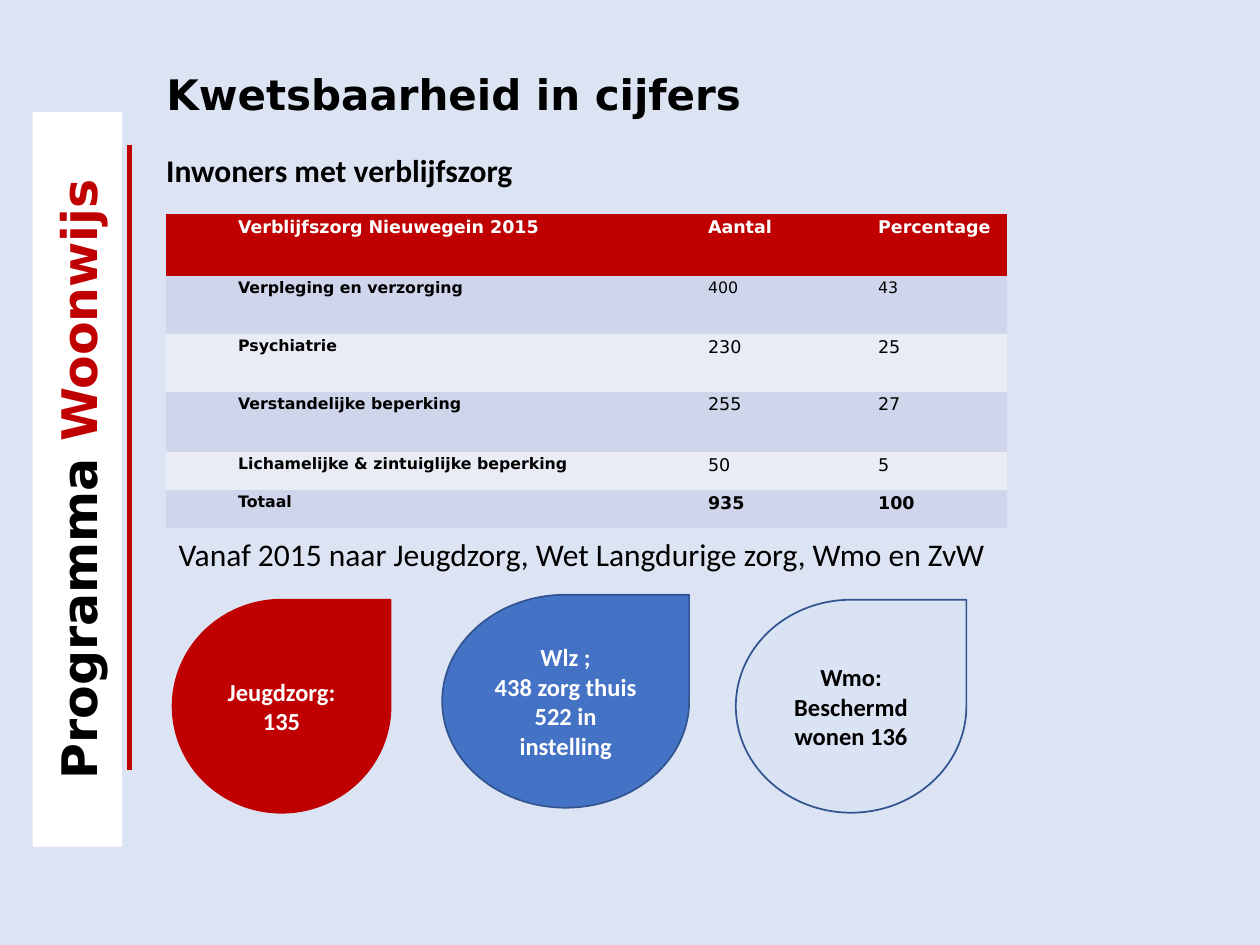
"""Build the slide on vulnerability figures in residential care."""
from lxml.etree import SubElement
from pptx import Presentation
from pptx.dml.color import RGBColor
from pptx.enum.shapes import MSO_CONNECTOR, MSO_SHAPE
from pptx.enum.text import MSO_ANCHOR as ANCHOR, MSO_AUTO_SIZE as AUTO_SIZE, PP_ALIGN as ALIGN
from pptx.oxml.ns import qn
from pptx.util import Pt

EMU_PER_PX = 9144
COLORS = {"background": "DAE3F3", "white": "FFFFFF", "black": "000000", "red": "C00000",
          "blue": "4472C4", "outline": "325491", "odd": "CFD5EA", "even": "E9EBF5"}
HEADING, BODY = "DejaVu Sans", "Calibri"

TITLE = "Kwetsbaarheid in cijfers"
TITLE_BOX = (122, 49, 647, 50)
BANNER = [("Programma ", "black"), ("Woonwijs", "red")]
BANNER_BOX = (-230, 345, 583, 71)
RULE = (103, 115, 103, 611)

CAPTIONS = [
    ("Inwoners met verblijfszorg", (122, 115, 598, 40), True),
    ("Vanaf 2015 naar Jeugdzorg, Wet Langdurige zorg, Wmo en ZvW", (132, 420, 683, 40), False),
]

CARE_ROWS = [
    ("Verblijfszorg Nieuwegein 2015", "Aantal", "Percentage"),
    ("Verpleging en verzorging", "400", "43"),
    ("Psychiatrie", "230", "25"),
    ("Verstandelijke beperking", "255", "27"),
    ("Lichamelijke & zintuiglijke beperking", "50", "5"),
    ("Totaal", "935", "100"),
]
TABLE_ORIGIN = (132, 170)
COLUMN_WIDTHS = (373, 135, 159)
ROW_HEIGHTS = (49, 46, 46, 48, 30, 30)
CELL_MARGINS = {"margin_left": 7, "margin_right": 7, "margin_top": 0, "margin_bottom": 0}
NO_GRID_STYLE = "{2D5ABB26-0587-4C30-8999-92F81FD0307C}"

DROPS = [
    (["Jeugdzorg: 135"], (137, 476, 173, 169), "red", "red", "white"),
    (["Wlz ;", "438 zorg thuis 522 in instelling"], (351, 472, 196, 169), "blue", "outline", "white"),
    (["Wmo: Beschermd wonen 136"], (584, 476, 183, 169), "background", "outline", "black"),
]


def px(*lengths):
    return [length * EMU_PER_PX for length in lengths]


def rgb(color):
    return RGBColor.from_string(COLORS[color])


def add_run(paragraph, words, color, size, name, bold=True):
    run = paragraph.add_run()
    run.text = words
    for key, value in {"size": Pt(size), "name": name, "bold": bold}.items():
        setattr(run.font, key, value)
    run.font.color.rgb = rgb(color)


def set_frame(frame, anchor, align):
    settings = {"word_wrap": True, "auto_size": AUTO_SIZE.NONE, "vertical_anchor": anchor}
    for key, value in settings.items():
        setattr(frame, key, value)
    frame.paragraphs[0].alignment = align
    return frame.paragraphs[0]


def paint(shape, fill, line=None):
    shape.shadow.inherit = False
    shape.fill.solid()
    shape.fill.fore_color.rgb = rgb(fill)
    if line:
        shape.line.color.rgb = rgb(line)
        shape.line.width = Pt(1)
    else:
        shape.line.fill.background()


def set_background(slide):
    fill = slide.background.fill
    fill.solid()
    fill.fore_color.rgb = rgb("background")
    color = next(slide.element.iter(qn("a:srgbClr")))
    SubElement(color, qn("a:alpha"), val="93000")


def add_title(slide):
    title = slide.shapes.title
    title.left, title.top, title.width, title.height = px(*TITLE_BOX)
    add_run(set_frame(title.text_frame, ANCHOR.TOP, ALIGN.LEFT), TITLE, "black", 24, HEADING)


def add_banner(slide):
    banner = slide.shapes.add_shape(MSO_SHAPE.RECTANGLE, *px(*BANNER_BOX))
    banner.rotation = 270
    paint(banner, "white")
    paragraph = set_frame(banner.text_frame, ANCHOR.MIDDLE, ALIGN.CENTER)
    for words, color in BANNER:
        add_run(paragraph, words, color, 28, HEADING)
    rule = slide.shapes.add_connector(MSO_CONNECTOR.STRAIGHT, *px(*RULE))
    rule.line.color.rgb = rgb("red")
    rule.line.width = Pt(3)
    SubElement(rule.element.spPr, qn("a:effectLst"))


def fill_cell(cell, words, row, column):
    for side, margin in CELL_MARGINS.items():
        setattr(cell, side, px(margin)[0])
    header, total = row == 0, row == len(CARE_ROWS) - 1
    cell.fill.solid()
    cell.fill.fore_color.rgb = rgb("red" if header else "odd" if row % 2 else "even")
    paragraph = cell.text_frame.paragraphs[0]
    paragraph.line_spacing = 1.15
    paragraph._p.get_or_add_pPr().set("marL", str(px(50)[0]))
    small = row == 1 or (column == 0 and not header)
    add_run(paragraph, words, "white" if header else "black", 9 if small else 10,
            HEADING, header or total or column == 0)


def add_care_table(slide):
    size = (sum(COLUMN_WIDTHS), sum(ROW_HEIGHTS))
    frame = slide.shapes.add_table(len(ROW_HEIGHTS), len(COLUMN_WIDTHS), *px(*TABLE_ORIGIN, *size))
    table = frame.table
    next(frame.element.iter(qn("a:tableStyleId"))).text = NO_GRID_STYLE
    for column, width in zip(table.columns, px(*COLUMN_WIDTHS)):
        column.width = width
    for row, height in zip(table.rows, px(*ROW_HEIGHTS)):
        row.height = height
    for row, values in enumerate(CARE_ROWS):
        for column, words in enumerate(values):
            fill_cell(table.cell(row, column), words, row, column)


def add_captions(slide):
    for words, box, bold in CAPTIONS:
        caption = slide.shapes.add_textbox(*px(*box))
        paragraph = set_frame(caption.text_frame, ANCHOR.TOP, ALIGN.LEFT)
        add_run(paragraph, words, "black", 18, BODY, bold)


def add_drops(slide):
    for lines, box, fill, line, color in DROPS:
        drop = slide.shapes.add_shape(MSO_SHAPE.TEAR, *px(*box))
        paint(drop, fill, line)
        paragraph = set_frame(drop.text_frame, ANCHOR.MIDDLE, ALIGN.CENTER)
        for index, words in enumerate(lines):
            if index:
                paragraph = drop.text_frame.add_paragraph()
                paragraph.alignment = ALIGN.CENTER
            add_run(paragraph, words, color, 14, BODY)


def main():
    deck = Presentation()
    deck.slide_width, deck.slide_height = px(1000, 750)
    slide = deck.slides.add_slide(deck.slide_layouts[5])
    set_background(slide)
    for add_part in (add_banner, add_title, add_care_table, add_drops, add_captions):
        add_part(slide)
    deck.save("out.pptx")


if __name__ == "__main__":
    main()
